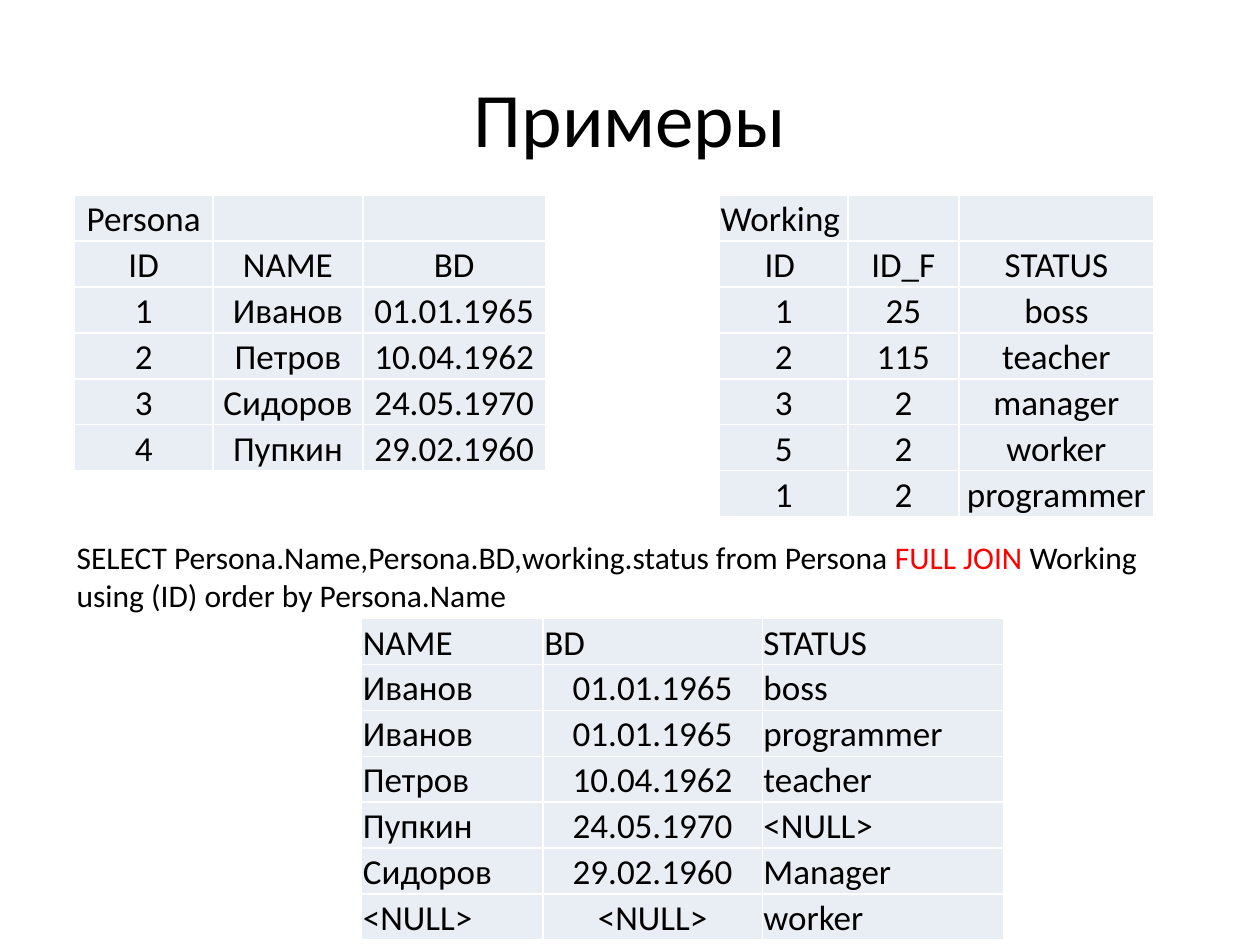
import pptx
import pptx.dml.color
import pptx.enum.text
import pptx.oxml
import pptx.oxml.ns
import pptx.util

Inches = pptx.util.Inches
ALIGN = {"l": pptx.enum.text.PP_ALIGN.LEFT, "c": pptx.enum.text.PP_ALIGN.CENTER}
ANCHOR = pptx.enum.text.MSO_ANCHOR

# Content
TITLE = "Примеры"
QUERY = [
    [("SELECT Persona.Name,Persona.BD,working.status from Persona ", "000000"),
     ("FULL JOIN ", "FF0000"), ("Working", "000000")],
    [("using (ID) order by Persona.Name", "000000")],
]
# "heading" aligns the first row, "body" the rows below, one letter per column
TABLES = [
    {"left": 0.59, "top": 1.55, "columns": (1.1, 1.19, 1.45),
     "heading": "ccc", "body": "ccc",
     "rows": [("Persona", "", ""),
              ("ID", "NAME", "BD"),
              ("1", "Иванов", "01.01.1965"),
              ("2", "Петров", "10.04.1962"),
              ("3", "Сидоров", "24.05.1970"),
              ("4", "Пупкин", "29.02.1960")]},
    {"left": 5.71, "top": 1.55, "columns": (1.02, 0.88, 1.55),
     "heading": "lcc", "body": "ccc",
     "rows": [("Working", "", ""),
              ("ID ", "ID_F", "STATUS"),
              ("1", "25", "boss"),
              ("2", "115", "teacher"),
              ("3", "2", "manager"),
              ("5", "2", "worker"),
              ("1", "2", "programmer")]},
    {"left": 2.87, "top": 4.91, "columns": (1.44, 1.74, 1.92),
     "heading": "lll", "body": "lcl",
     "rows": [("NAME", "BD", "STATUS"),
              ("Иванов", "01.01.1965", "boss"),
              ("Иванов", "01.01.1965", "programmer"),
              ("Петров", "10.04.1962", "teacher"),
              ("Пупкин", "24.05.1970", "<NULL>"),
              ("Сидоров", "29.02.1960", "Manager"),
              ("<NULL>", "<NULL>", "worker")]},
]
TABLE_ROW_HEIGHT = 2.55 / 7


def color(value):
    return pptx.dml.color.RGBColor.from_string(value)


def write(paragraph, text, size=20, fill="000000", align="l"):
    paragraph.alignment = ALIGN[align]
    run = paragraph.add_run()
    run.text = text
    run.font.name = "Calibri"
    run.font.size = pptx.util.Pt(size)
    run.font.color.rgb = color(fill)


def add_borders(cell, line_color="FFFFFF", width=1):
    properties = cell._tc.get_or_add_tcPr()
    for index, side in enumerate("LRTB"):
        properties.insert(index, pptx.oxml.parse_xml(
            f'<a:ln{side} {pptx.oxml.ns.nsdecls("a")} w="{pptx.util.Pt(width)}">'
            f'<a:solidFill><a:srgbClr val="{line_color}"/></a:solidFill></a:ln{side}>'))


def add_data_table(slide, data):
    rows, columns = data["rows"], data["columns"]
    table = slide.shapes.add_table(
        len(rows), len(columns), Inches(data["left"]), Inches(data["top"]),
        Inches(sum(columns)), Inches(TABLE_ROW_HEIGHT * len(rows))).table
    for column, width in zip(table.columns, columns):
        column.width = Inches(width)
    for row_index, row in enumerate(rows):
        table.rows[row_index].height = Inches(TABLE_ROW_HEIGHT)
        aligns = data["body"] if row_index else data["heading"]
        for column_index, text in enumerate(row):
            cell = table.cell(row_index, column_index)
            cell.margin_left = cell.margin_right = cell.margin_top = Inches(0.01)
            cell.margin_bottom = 0
            cell.vertical_anchor = ANCHOR.BOTTOM
            cell.fill.solid()
            cell.fill.fore_color.rgb = color("E9EDF4")
            add_borders(cell)
            if text:
                write(cell.text_frame.paragraphs[0], text, align=aligns[column_index])


def main():
    presentation = pptx.Presentation()
    presentation.slide_width, presentation.slide_height = Inches(10), Inches(7.5)
    slide = presentation.slides.add_slide(presentation.slide_layouts[5])

    # Title
    title = slide.shapes.title
    title.left, title.top, title.width, title.height = map(Inches, (0.5, 0.3, 9, 1.25))
    title.text_frame.vertical_anchor = ANCHOR.MIDDLE
    write(title.text_frame.paragraphs[0], TITLE, size=44, align="c")

    # Source tables and the joined result
    for data in TABLES:
        add_data_table(slide, data)

    # Query
    frame = slide.shapes.add_textbox(*map(Inches, (0.51, 4.22, 8.7, 0.71))).text_frame
    frame.word_wrap = False
    frame.auto_size = pptx.enum.text.MSO_AUTO_SIZE.SHAPE_TO_FIT_TEXT
    for index, line in enumerate(QUERY):
        paragraph = frame.add_paragraph() if index else frame.paragraphs[0]
        for text, fill in line:
            write(paragraph, text, size=18, fill=fill)

    presentation.save("out.pptx")


if __name__ == "__main__":
    main()
